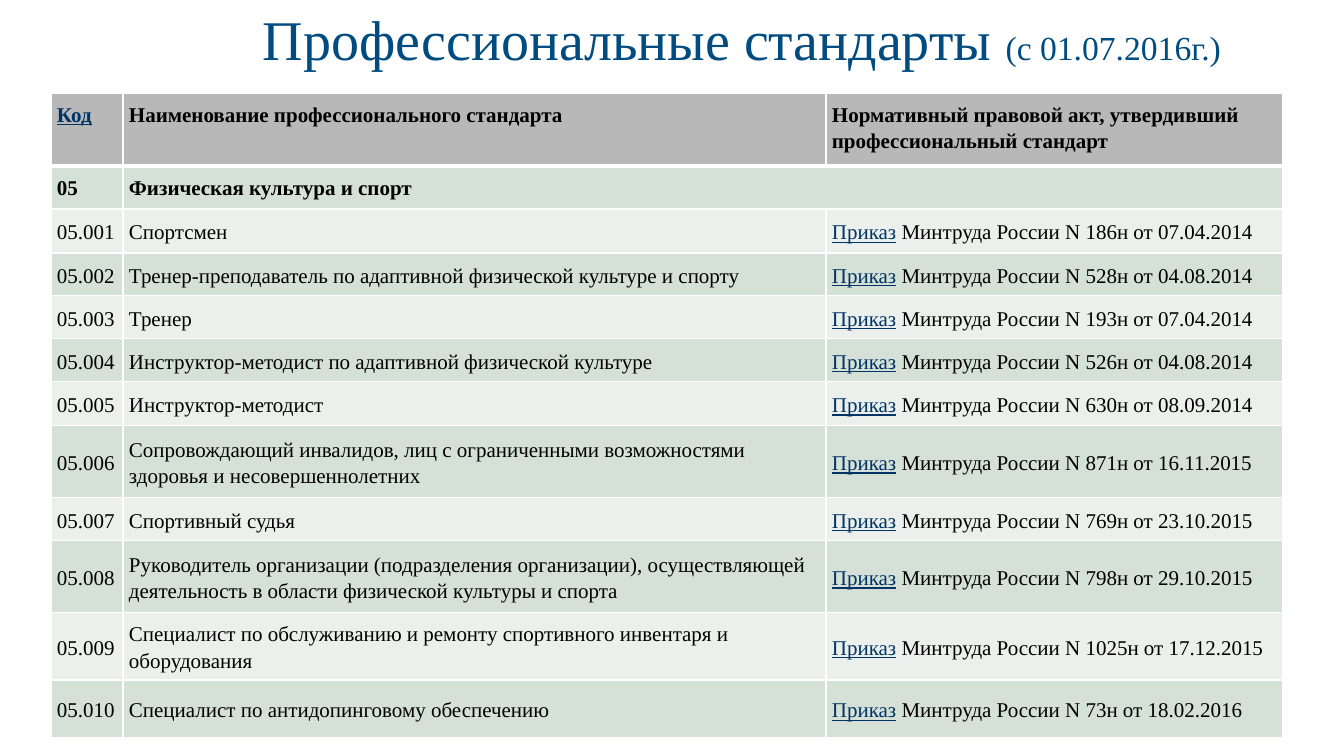
from dataclasses import dataclass

import lxml.etree
import pptx
import pptx.dml.color
import pptx.enum.text
import pptx.oxml.ns
import pptx.util


@dataclass(frozen=True)
class Theme:
    font: str = "Times New Roman"
    title: str = "004C80"
    link: str = "003366"
    ink: str = "000000"
    border: str = "FFFFFF"
    header: str = "B8B8B8"
    bands: tuple = ("D5E0D6", "EBF0EC")
    title_size: int = 40
    date_size: int = 24
    cell_size: int = 15


THEME = Theme()
PX_PER_INCH = 100.8
COLUMN_WIDTHS = (72, 703, 457)
ROW_HEIGHTS = (73, 43, 44, 43, 43, 43, 44, 72, 43, 72, 67, 58)
HEADINGS = (
    "Код",
    "Наименование профессионального стандарта",
    "Нормативный правовой акт, утвердивший профессиональный стандарт",
)
SECTION = ("05", "Физическая культура и спорт")
STANDARDS = (
    ("Спортсмен", "186н от 07.04.2014"),
    ("Тренер-преподаватель по адаптивной физической культуре и спорту", "528н от 04.08.2014"),
    ("Тренер", "193н от 07.04.2014"),
    ("Инструктор-методист по адаптивной физической культуре", "526н от 04.08.2014"),
    ("Инструктор-методист", "630н от 08.09.2014"),
    ("Сопровождающий инвалидов, лиц с ограниченными возможностями здоровья и несовершеннолетних",
     "871н от 16.11.2015"),
    ("Спортивный судья", "769н от 23.10.2015"),
    ("Руководитель организации (подразделения организации), осуществляющей "
     "деятельность в области физической культуры и спорта", "798н от 29.10.2015"),
    ("Специалист по обслуживанию и ремонту спортивного инвентаря и оборудования",
     "1025н от 17.12.2015"),
    ("Специалист по антидопинговому обеспечению", "73н от 18.02.2016"),
)


def px(length):
    return pptx.util.Emu(round(length * 914400 / PX_PER_INCH))


def rgb(value):
    return pptx.dml.color.RGBColor.from_string(value)


def add_title(slide):
    title = slide.shapes.add_textbox(px(224), px(0), px(1036), px(78))
    frame = title.text_frame
    frame.word_wrap = True
    frame.auto_size = pptx.enum.text.MSO_AUTO_SIZE.SHAPE_TO_FIT_TEXT
    heading = frame.paragraphs[0]
    heading.alignment = pptx.enum.text.PP_ALIGN.CENTER
    heading.font.name = THEME.font
    heading.font.color.rgb = rgb(THEME.title)
    for wording, size in (("Профессиональные стандарты ", THEME.title_size),
                          ("(с 01.07.2016г.)", THEME.date_size)):
        run = heading.add_run()
        run.text = wording
        run.font.size = pptx.util.Pt(size)


def set_borders(cell, top=1, bottom=1):
    properties = cell._tc.get_or_add_tcPr()
    for side, width in (("L", 1), ("R", 1), ("T", top), ("B", bottom)):
        line = lxml.etree.SubElement(properties, pptx.oxml.ns.qn(f"a:ln{side}"),
                                     w=str(pptx.util.Pt(width)))
        solid = lxml.etree.SubElement(line, pptx.oxml.ns.qn("a:solidFill"))
        lxml.etree.SubElement(solid, pptx.oxml.ns.qn("a:srgbClr"), val=THEME.border)


def style_cell(cell, fill, middle=False, top=1, bottom=1):
    set_borders(cell, top, bottom)
    cell.fill.solid()
    cell.fill.fore_color.rgb = rgb(fill)
    cell.margin_left = cell.margin_right = px(6)
    cell.margin_top = cell.margin_bottom = px(7)
    anchors = pptx.enum.text.MSO_ANCHOR
    cell.vertical_anchor = anchors.MIDDLE if middle else anchors.TOP


def paint(font, link):
    font.color.rgb = rgb(THEME.link if link else THEME.ink)
    font.underline = link


def write_cell(cell, *parts, bold=False):
    paragraph = cell.text_frame.paragraphs[0]
    paragraph.line_spacing = 1.15
    paragraph.font.name = THEME.font
    paragraph.font.size = pptx.util.Pt(THEME.cell_size)
    paragraph.font.bold = bold
    for wording, link in parts:
        run = paragraph.add_run()
        run.text = wording
        paint(run.font if len(parts) > 1 else paragraph.font, link)


def add_standards(slide):
    table = slide.shapes.add_table(
        len(ROW_HEIGHTS), len(COLUMN_WIDTHS), px(51), px(93),
        px(sum(COLUMN_WIDTHS)), px(sum(ROW_HEIGHTS))).table
    table.first_row = table.horz_banding = False
    for column, width in zip(table.columns, COLUMN_WIDTHS):
        column.width = px(width)
    for row, height in zip(table.rows, ROW_HEIGHTS):
        row.height = px(height)

    for column, heading in enumerate(HEADINGS):
        style_cell(table.cell(0, column), THEME.header, bottom=3)
        write_cell(table.cell(0, column), (heading, column == 0), bold=True)
        style_cell(table.cell(1, column), THEME.bands[0], top=3)
    table.cell(1, 1).merge(table.cell(1, 2))
    for column, wording in enumerate(SECTION):
        write_cell(table.cell(1, column), (wording, False), bold=True)

    for number, (standard, order) in enumerate(STANDARDS, 1):
        code, name, act = table.rows[number + 1].cells
        for cell in (code, name, act):
            style_cell(cell, THEME.bands[number % 2], middle=True)
        write_cell(code, (f"05.{number:03}", False))
        write_cell(name, (standard, False))
        write_cell(act, ("Приказ", True), (f" Минтруда России N {order}", False))


def main():
    deck = pptx.Presentation()
    deck.slide_width, deck.slide_height = px(1344), px(756)
    slide = deck.slides.add_slide(deck.slide_layouts[6])
    add_standards(slide)
    add_title(slide)
    deck.save("out.pptx")


if __name__ == "__main__":
    main()
